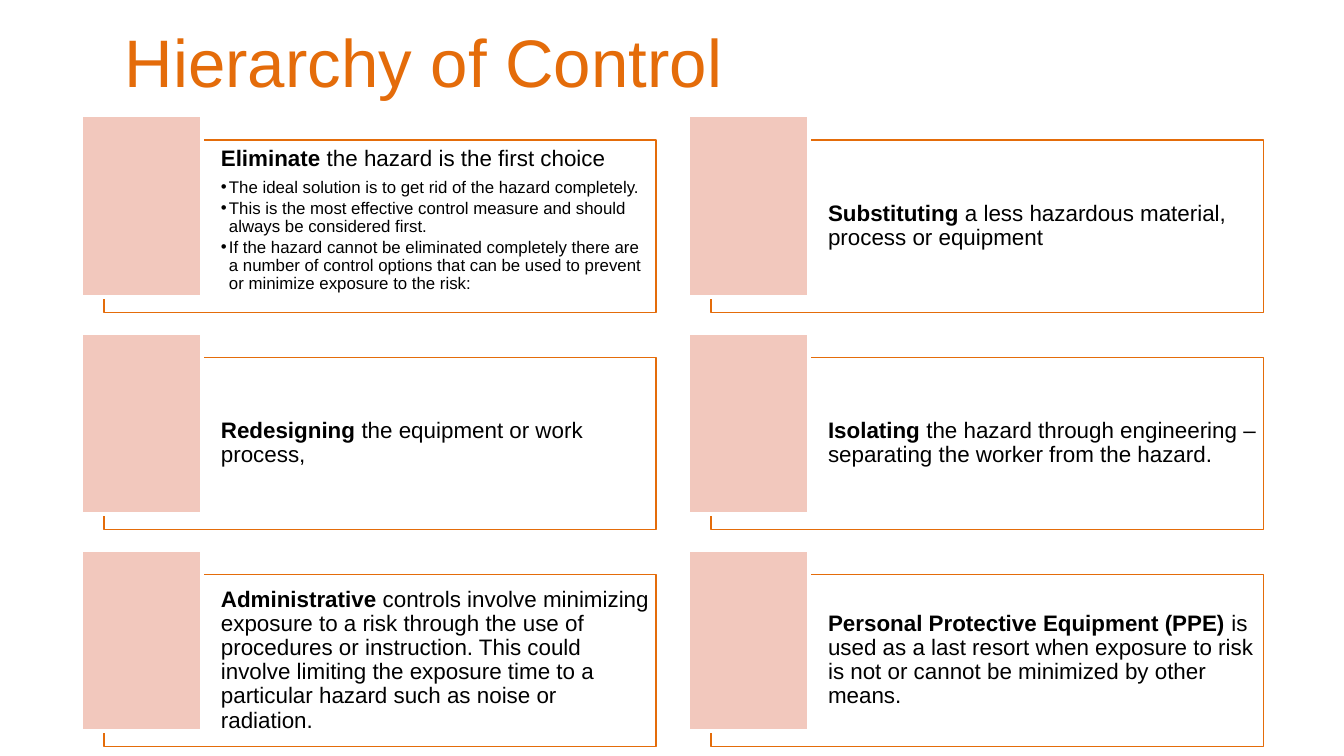
"""Build the Hierarchy of Control slide: six cards in two columns and three rows."""
import pptx
import pptx.dml.color
import pptx.enum.shapes
import pptx.enum.text
import pptx.oxml
import pptx.oxml.ns
import pptx.util

COLORS = {"accent": "E46C0A", "tile": "F2C8BD", "paper": "FFFFFF", "ink": "000000"}
FONT = "Arial"
UNIT = pptx.util.Inches(0.1)
COLUMNS, ROWS = 100, 56.25
CARD_COLUMNS, CARD_ROWS = 42.8, 14.65
COLUMN_STEP, ROW_STEP = 45.17, 16.15
GRID_LEFT, GRID_TOP = 6.03, 8.6

CARDS = [
    ("Eliminate ", "the hazard is the first choice", [
        "The ideal solution is to get rid of the hazard completely.",
        "This is the most effective control measure and should always be considered first.",
        "If the hazard cannot be eliminated completely there are a number of control options "
        "that can be used to prevent or minimize exposure to the risk:",
    ]),
    ("Substituting ", "a less hazardous material, process or equipment", []),
    ("Redesigning ", "the equipment or work process,", []),
    ("Isolating ", "the hazard through engineering – separating the worker from the hazard.", []),
    ("Administrative ", "controls involve minimizing exposure to a risk through the use of "
     "procedures or instruction. This could involve limiting the exposure time to a "
     "particular hazard such as noise or radiation.", []),
    ("Personal Protective Equipment (PPE) ", "is used as a last resort when exposure to risk "
     "is not or cannot be minimized by other means.", []),
]


def color(name):
    """Return the named colour."""
    return pptx.dml.color.RGBColor.from_string(COLORS[name])


def grid(*lengths):
    """Turn grid units into slide lengths."""
    return [round(length * UNIT) for length in lengths]


def add_span(para, text, size, ink="ink", bold=False):
    """Add one styled run to a paragraph."""
    span = para.add_run()
    span.text = text
    span.font.name = FONT
    span.font.size = pptx.util.Pt(size)
    span.font.bold = bold
    span.font.color.rgb = color(ink)


def add_rectangle(page, box, fill, line, width):
    """Add a flat rectangle with a fill and an outline."""
    shape = page.shapes.add_shape(pptx.enum.shapes.MSO_SHAPE.RECTANGLE, *grid(*box))
    shape.shadow.inherit = False
    shape.fill.solid()
    shape.fill.fore_color.rgb = color(fill)
    shape.line.color.rgb = color(line)
    shape.line.width = pptx.util.Pt(width)
    return shape


def set_opacity(shape, percent):
    """Make the solid fill of a shape partly transparent."""
    tone = shape.fill._xPr.find(".//" + pptx.oxml.ns.qn("a:srgbClr"))
    alpha = pptx.oxml.parse_xml(f'<a:alpha {pptx.oxml.ns.nsdecls("a")} val="{percent * 1000}"/>')
    tone.append(alpha)


def set_bullet(para):
    """Give a paragraph a hanging bullet."""
    properties = para._p.get_or_add_pPr()
    indent = pptx.util.Inches(0.06)
    properties.set("marL", str(indent))
    properties.set("indent", str(-indent))
    for tag in (f'buFont {{}} typeface="{FONT}"', 'buChar {} char="•"'):
        element = tag.format(pptx.oxml.ns.nsdecls("a"))
        properties.append(pptx.oxml.parse_xml(f"<a:{element}/>"))


def set_spacing(para, after):
    """Left-align a paragraph with tight lines and a gap below."""
    para.alignment = pptx.enum.text.PP_ALIGN.LEFT
    para.line_spacing = 0.9
    para.space_after = pptx.util.Pt(after)


def add_title(page, box, text):
    """Place the slide title in its box."""
    frame = page.shapes.add_textbox(*grid(*box)).text_frame
    frame.word_wrap = True
    frame.vertical_anchor = pptx.enum.text.MSO_ANCHOR.MIDDLE
    add_span(frame.paragraphs[0], text, 36, "accent")


def add_card(page, box, term, detail, points):
    """Place an outlined card with its text and an overlapping corner tile."""
    left, top, width, height = box
    panel_box = (left + width * 0.04, top + height * 0.125, width * 0.96, height * 0.875)
    panel = add_rectangle(page, panel_box, "paper", "accent", 0.75)
    set_opacity(panel, 40)

    frame = panel.text_frame
    frame.word_wrap = True
    frame.margin_left = pptx.util.Inches(0.87)
    frame.margin_top = frame.margin_right = frame.margin_bottom = pptx.util.Inches(0.05)
    anchors = pptx.enum.text.MSO_ANCHOR
    frame.vertical_anchor = anchors.TOP if points else anchors.MIDDLE
    para = frame.paragraphs[0]
    set_spacing(para, 4.2)
    add_span(para, term, 12, bold=True)
    add_span(para, detail, 12)
    for point in points:
        para = frame.add_paragraph()
        para.level = 1
        set_spacing(para, 1.35)
        set_bullet(para)
        add_span(para, point, 9)

    add_rectangle(page, (left, top, width * 0.21, height * 0.92), "tile", "paper", 2)


def main():
    """Build and save the deck."""
    deck = pptx.Presentation()
    deck.slide_width, deck.slide_height = grid(COLUMNS, ROWS)
    page = deck.slides.add_slide(deck.slide_layouts[6])
    add_title(page, (8.3, 1.4, 91.7, 6.3), "Hierarchy of Control")
    for index, card in enumerate(CARDS):
        row, column = divmod(index, 2)
        box = (GRID_LEFT + column * COLUMN_STEP, GRID_TOP + row * ROW_STEP, CARD_COLUMNS, CARD_ROWS)
        add_card(page, box, *card)
    deck.save("out.pptx")


if __name__ == "__main__":
    main()
